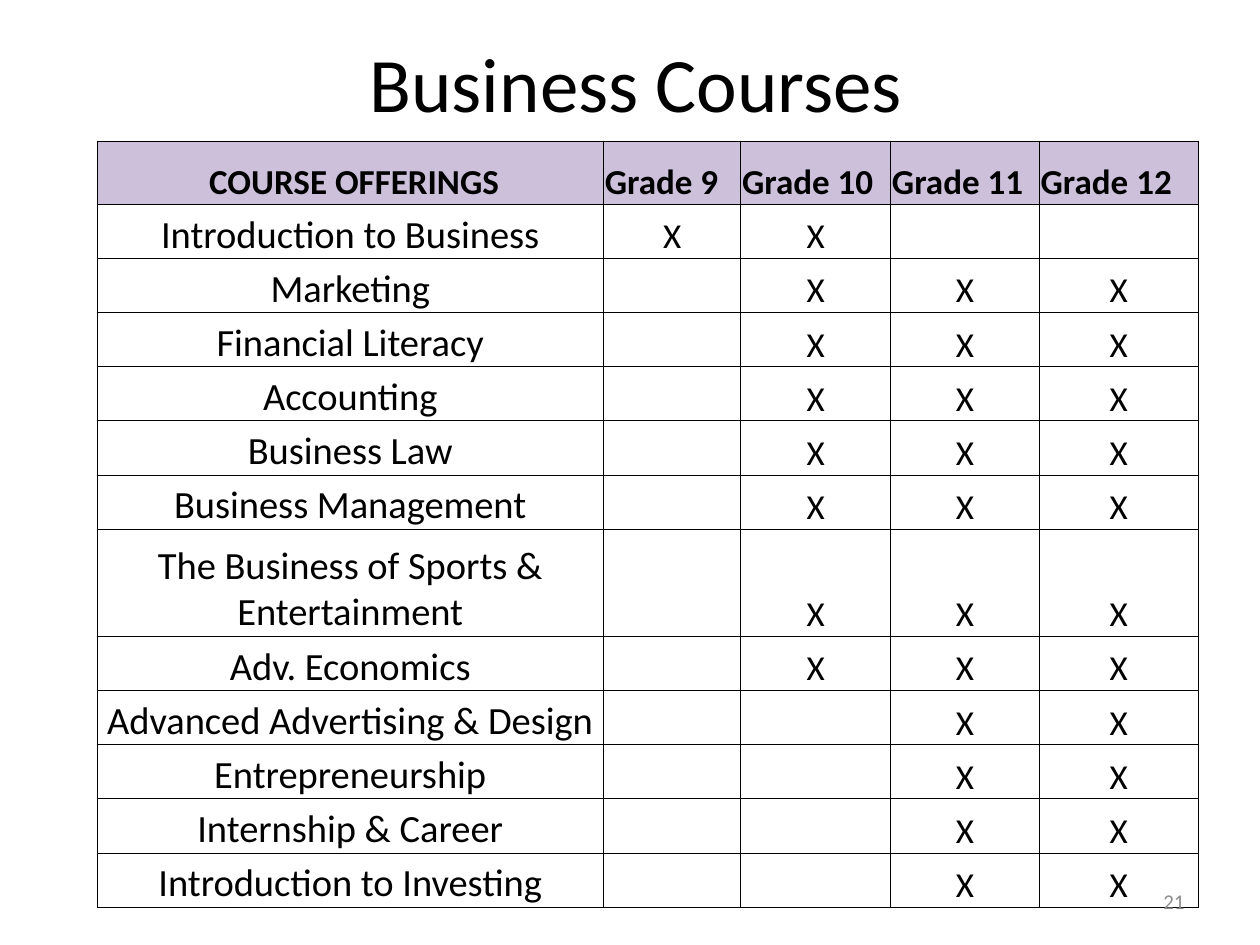
from lxml.etree import SubElement
from pptx import Presentation
from pptx.dml.color import RGBColor
from pptx.enum.text import MSO_ANCHOR as ANCHOR, PP_ALIGN as ALIGN
from pptx.oxml.ns import qn
from pptx.util import Inches, Pt

WIDTH, HEIGHT = 10, 7.5
FONT = "Calibri"
BLACK, GREY, LILAC = "000000", "8C8C8C", "CCC0DA"
GRADES = (9, 10, 11, 12)
COLUMNS = (4.02, 1.09, 1.19, 1.18, 1.26)
HEADER_ROW, ROW, TALL_ROW = 0.5, 0.43, 0.85
TWO_LINE_COURSE = "The Business of Sports & Entertainment"
COURSES = {
    "Introduction to Business": (9, 10),
    "Marketing": (10, 11, 12),
    "Financial Literacy": (10, 11, 12),
    "Accounting": (10, 11, 12),
    "Business Law": (10, 11, 12),
    "Business Management": (10, 11, 12),
    TWO_LINE_COURSE: (10, 11, 12),
    "Adv. Economics": (10, 11, 12),
    "Advanced Advertising & Design": (11, 12),
    "Entrepreneurship": (11, 12),
    "Internship & Career": (11, 12),
    "Introduction to Investing": (11, 12),
}


def color(hex_code):
    """Turn a hex string into a colour."""
    return RGBColor.from_string(hex_code)


def write(tf, text, size, align, hex_code=BLACK, bold=False):
    """Set one paragraph of text and format it."""
    tf.text = text
    p = tf.paragraphs[0]
    p.alignment = align
    for r in p.runs:
        r.font.name, r.font.size, r.font.bold = FONT, Pt(size), bold
        r.font.color.rgb = color(hex_code)


def add_label(slide, box, text, size, align, hex_code=BLACK):
    """Add a text box whose place is given as shares of the slide."""
    x, y, w, h = box
    sp = slide.shapes.add_textbox(
        Inches(x * WIDTH), Inches(y * HEIGHT), Inches(w * WIDTH), Inches(h * HEIGHT))
    tf = sp.text_frame
    tf.word_wrap = True
    tf.vertical_anchor = ANCHOR.MIDDLE
    write(tf, text, size, align, hex_code)


def add_borders(cell):
    """Draw a thin black line on each side of a cell."""
    tc_pr = cell._tc.get_or_add_tcPr()
    for index, side in enumerate(("lnL", "lnR", "lnT", "lnB")):
        ln = SubElement(tc_pr, qn(f"a:{side}"), w=str(Pt(0.5)))
        fill = SubElement(ln, qn("a:solidFill"))
        SubElement(fill, qn("a:srgbClr"), val=BLACK)
        tc_pr.insert(index, ln)


def fill_cell(cell, text, size, align, bold=False, fill=None):
    """Style a table cell and write its text."""
    cell.margin_left = cell.margin_right = cell.margin_top = Inches(0.01)
    cell.margin_bottom = 0
    cell.vertical_anchor = ANCHOR.BOTTOM
    if fill:
        cell.fill.solid()
        cell.fill.fore_color.rgb = color(fill)
    else:
        cell.fill.background()
    add_borders(cell)
    write(cell.text_frame, text, size, align, bold=bold)


def add_course_table(slide):
    """Add the table of courses and the grades they are open to."""
    heights = [HEADER_ROW] + [TALL_ROW if c == TWO_LINE_COURSE else ROW for c in COURSES]
    table = slide.shapes.add_table(
        len(heights), len(COLUMNS), Inches(0.77), Inches(1.12),
        Inches(sum(COLUMNS)), Inches(sum(heights))).table
    table.first_row = table.horz_banding = False
    for column, width in zip(table.columns, COLUMNS):
        column.width = Inches(width)
    for row, height in zip(table.rows, heights):
        row.height = Inches(height)

    fill_cell(table.cell(0, 0), " COURSE OFFERINGS", 20, ALIGN.CENTER, True, LILAC)
    for col, grade in enumerate(GRADES, 1):
        fill_cell(table.cell(0, col), f"Grade {grade}", 20, ALIGN.LEFT, True, LILAC)
    for row, (course, open_to) in enumerate(COURSES.items(), 1):
        fill_cell(table.cell(row, 0), course, 22, ALIGN.CENTER)
        for col, grade in enumerate(GRADES, 1):
            mark = "X" if grade in open_to else ""
            fill_cell(table.cell(row, col), mark, 20, ALIGN.CENTER)


def main():
    """Build the slide and save it."""
    prs = Presentation()
    prs.slide_width, prs.slide_height = Inches(WIDTH), Inches(HEIGHT)
    slide = prs.slides.add_slide(prs.slide_layouts[6])
    add_label(slide, (0.055, 0.025, 0.9, 0.124), "Business Courses", 44, ALIGN.CENTER)
    add_course_table(slide)
    add_label(slide, (0.717, 0.927, 0.233, 0.053), "21", 12, ALIGN.RIGHT, GREY)
    prs.save("out.pptx")


if __name__ == "__main__":
    main()
